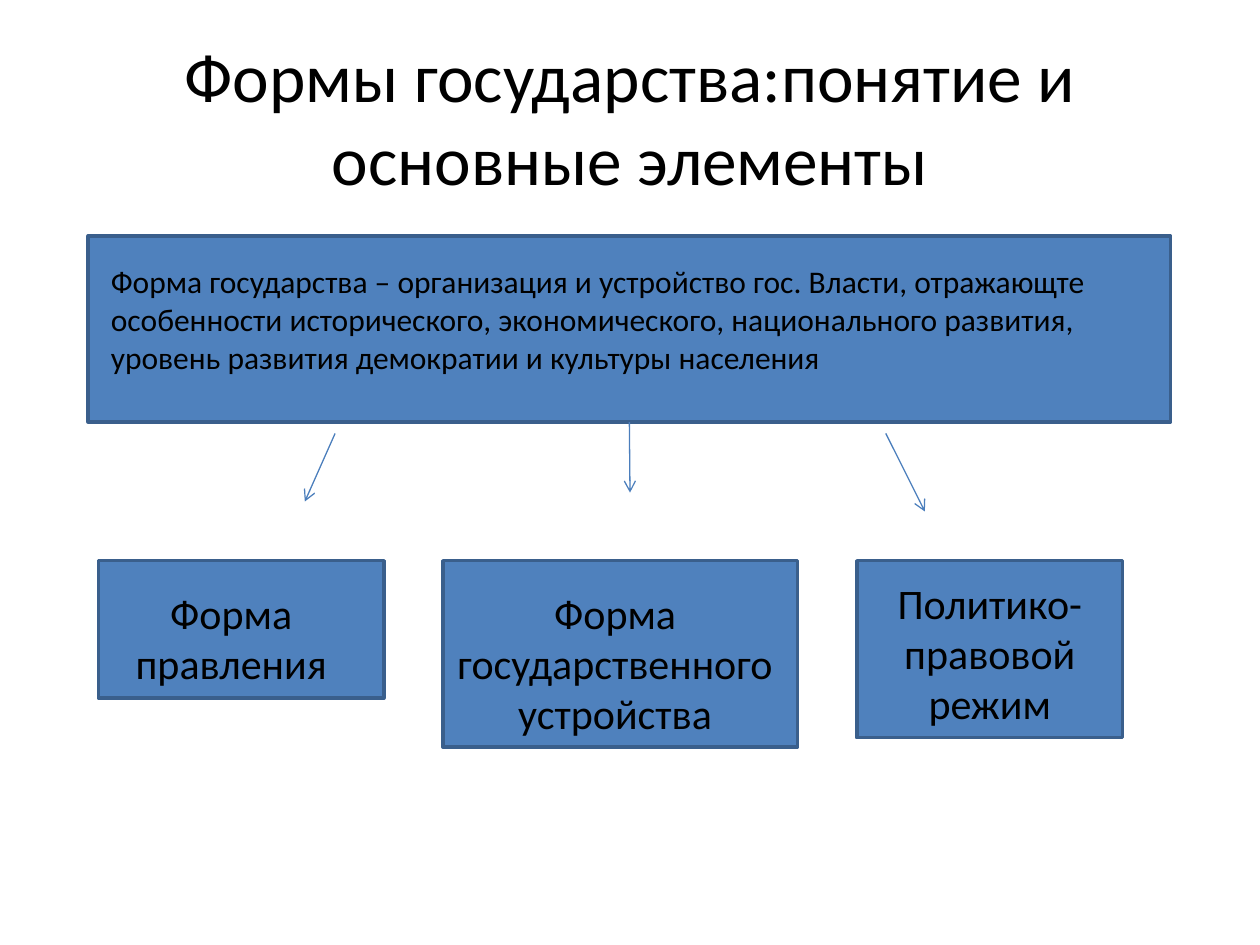
from lxml import etree
from pptx import Presentation
from pptx.dml.color import RGBColor
from pptx.enum.shapes import MSO_CONNECTOR, MSO_SHAPE
from pptx.enum.text import MSO_ANCHOR, MSO_AUTO_SIZE, PP_ALIGN
from pptx.oxml.ns import qn
from pptx.util import Pt

RECTANGLE = MSO_SHAPE.RECTANGLE
STRAIGHT = MSO_CONNECTOR.STRAIGHT
LEFT, CENTER = PP_ALIGN.LEFT, PP_ALIGN.CENTER
MIDDLE, TOP = MSO_ANCHOR.MIDDLE, MSO_ANCHOR.TOP
FIXED = MSO_AUTO_SIZE.NONE
BOTTOM_SIDE = 2

FONT = "Calibri"
COLORS = {"text": "000000", "fill": "4F81BD", "border": "3A5F8C", "arrow": "4B7EBC"}

# Areas are left, top, width, height in points.
TITLE = "Формы государства:понятие и основные элементы"
TITLE_AREA = (36, 21.6, 648, 90)
DEFINITION = {
    "text": "Форма государства – организация и устройство гос. Власти, отражающте "
            "особенности исторического, экономического, национального развития, "
            "уровень развития демократии и культуры населения",
    "box": (50.4, 134.9, 618.5, 106.3),
    "text_area": (56.2, 146.2, 602, 72.7),
}
ELEMENTS_TOP = 320.4
ELEMENTS = [
    {"text": "Форма правления",
     "box": (56.2, ELEMENTS_TOP, 163.2, 78.5), "text_area": (61.9, 331.9, 140.4, 65.4)},
    {"text": "Форма государственного устройства",
     "box": (253.2, ELEMENTS_TOP, 202.5, 106.6), "text_area": (253.2, 331.9, 196.6, 94.4)},
    {"text": "Политико-правовой режим",
     "box": (489.6, ELEMENTS_TOP, 151.9, 101.2), "text_area": (495.4, 326.2, 140.4, 94.4)},
]
MIDDLE_ARROW = (360, 241.2, 360, 281.5)
SIDE_ARROWS = [(506.2, 247.7, 528.5, 292.3), (191.5, 247.7, 174.2, 286.6)]


def color(name):
    return RGBColor.from_string(COLORS[name])


def points(values):
    return [Pt(value) for value in values]


def write(frame, text, size, align, anchor):
    frame.word_wrap = True
    frame.auto_size = FIXED
    frame.vertical_anchor = anchor
    para = frame.paragraphs[0]
    para.alignment = align
    span = para.add_run()
    span.text = text
    span.font.name = FONT
    span.font.size = Pt(size)
    span.font.color.rgb = color("text")


def add_box(page, area):
    box = page.shapes.add_shape(RECTANGLE, *points(area))
    box.shadow.inherit = False
    box.fill.solid()
    box.fill.fore_color.rgb = color("fill")
    box.line.color.rgb = color("border")
    box.line.width = Pt(2)
    return box


def add_label(page, item, size, align):
    label = page.shapes.add_textbox(*points(item["text_area"]))
    write(label.text_frame, item["text"], size, align, TOP)


def add_arrow(page, ends):
    arrow = page.shapes.add_connector(STRAIGHT, *points(ends))
    arrow.line.color.rgb = color("arrow")
    arrow.line.width = Pt(0.75)
    properties = arrow.element.spPr
    etree.SubElement(properties.find(qn("a:ln")), qn("a:tailEnd"), type="arrow")
    etree.SubElement(properties, qn("a:effectLst"))
    return arrow


def main():
    deck = Presentation()
    deck.slide_width, deck.slide_height = Pt(720), Pt(540)
    page = deck.slides.add_slide(deck.slide_layouts[5])

    title = page.shapes.title
    title.left, title.top, title.width, title.height = points(TITLE_AREA)
    write(title.text_frame, TITLE, 39.6, CENTER, MIDDLE)

    definition_box = add_box(page, DEFINITION["box"])
    add_label(page, DEFINITION, 18, LEFT)

    add_arrow(page, MIDDLE_ARROW).begin_connect(definition_box, BOTTOM_SIDE)
    for ends in SIDE_ARROWS:
        add_arrow(page, ends)

    for element in ELEMENTS:
        add_box(page, element["box"])
    for element in ELEMENTS:
        add_label(page, element, 24, CENTER)

    deck.save("out.pptx")


if __name__ == "__main__":
    main()
